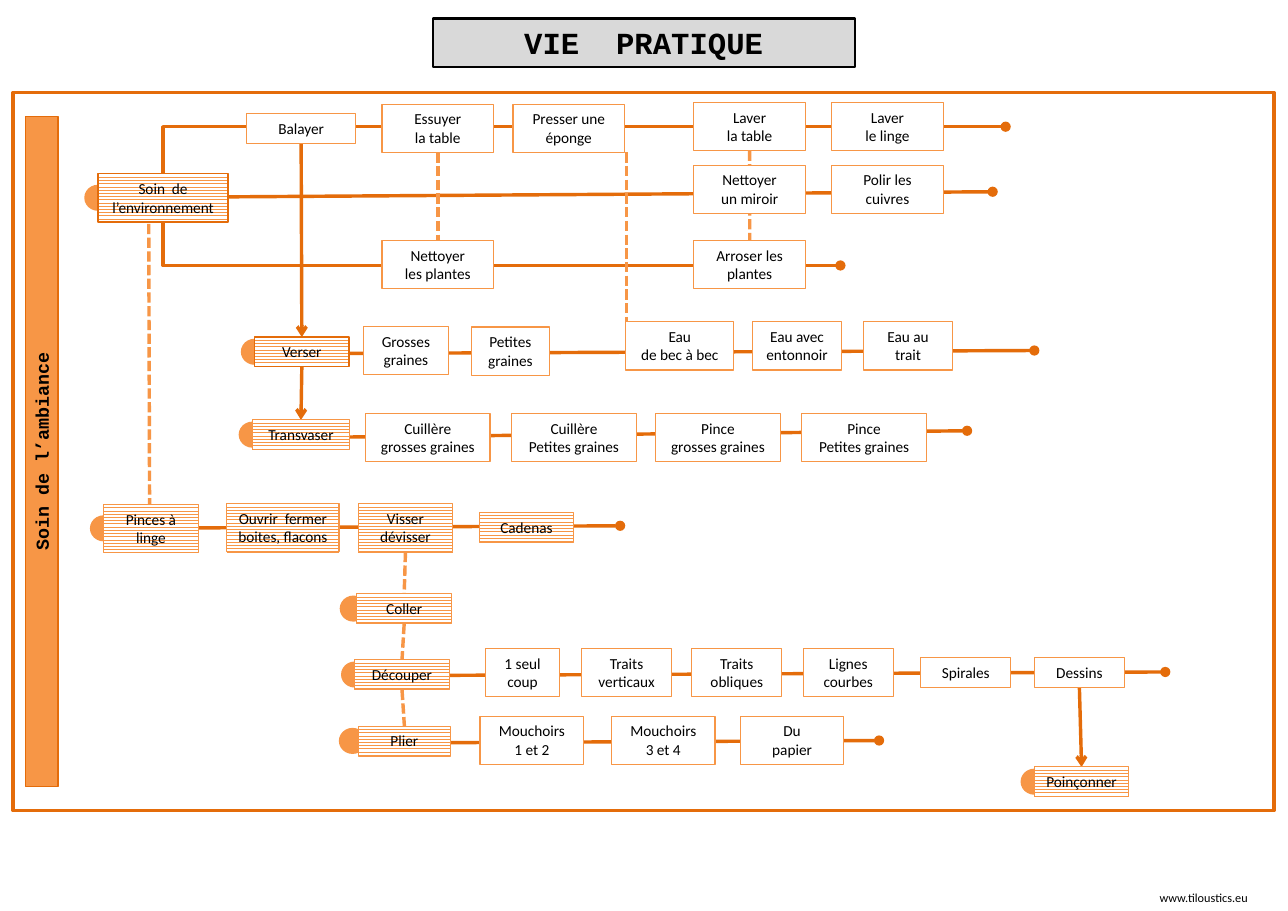
import pptx
import pptx.dml.color
import pptx.enum.dml
import pptx.enum.shapes
import pptx.enum.text
import pptx.oxml
import pptx.oxml.ns
import pptx.util
import lxml.etree

Cm = pptx.util.Cm
Pt = pptx.util.Pt
PRESET = pptx.enum.shapes.MSO_SHAPE
CONNECTOR = pptx.enum.shapes.MSO_CONNECTOR
COLOURS = {
    "dark": "E46C0A",
    "orange": "F79646",
    "white": "FFFFFF",
    "grey": "D9D9D9",
    "black": "000000",
}

STEPS = [
    (2.36, 2.57, [(16.0, "Laver\nla table"), (19.18, "Laver\nle linge")]),
    (2.4, 2.57, [(8.81, "Essuyer\nla table"), (11.83, "Presser une éponge")]),
    (2.62, 2.51, [(5.69, "Balayer")]),
    (3.81, 2.57, [(16.0, "Nettoyer\nun miroir"), (19.18, "Polir les cuivres")]),
    (5.55, 2.57, [(8.81, "Nettoyer\nles plantes"), (16.0, "Arroser les plantes")]),
    (7.53, 1.96, [(8.38, "Grosses graines")]),
    (7.54, 1.8, [(10.87, "Petites\ngraines")]),
    (7.42, 2.49, [(14.43, "Eau\nde bec à bec")]),
    (7.42, 2.06, [(17.35, "Eau avec entonnoir"), (19.91, "Eau au trait")]),
    (9.54, 2.87, [(8.43, "Cuillère\ngrosses graines"), (11.8, "Cuillère\nPetites graines"),
                  (15.12, "Pince\ngrosses graines"), (18.49, "Pince\nPetites graines")]),
    (14.95, 1.7, [(11.2, "1 seul\ncoup")]),
    (14.95, 2.08, [(13.41, "Traits verticaux"), (15.95, "Traits obliques"),
                   (18.52, "Lignes courbes")]),
    (15.16, 2.08, [(21.23, "Spirales"), (23.85, "Dessins")]),
    (16.51, 2.39, [(11.07, "Mouchoirs\n1 et 2"), (14.1, "Mouchoirs\n3 et 4"),
                   (17.07, "Du\npapier")]),
]

STRIPED_STEPS = [
    (5.23, 11.61, 2.59, "Ouvrir  fermer\nboites, flacons"),
    (8.26, 11.61, 2.18, "Visser dévisser"),
    (11.05, 11.81, 2.18, "Cadenas"),
]

THEMES = [
    (2.26, 4.01, 3.0, "Soin  de l’environnement", 0.28, "dark"),
    (5.87, 7.77, 2.18, "Verser", 0.28, "dark"),
    (5.82, 9.68, 2.24, "Transvaser", 0.28, "orange"),
    (2.39, 11.63, 2.18, "Pinces à linge", 0.28, "orange"),
    (8.23, 13.69, 2.18, "Coller", 0.36, "orange"),
    (8.18, 15.21, 2.18, "Découper", 0.28, "orange"),
    (8.26, 16.74, 2.13, "Plier", 0.41, "orange"),
    (23.85, 17.68, 2.18, "Poinçonner", 0.28, "orange"),
]

PROGRESSIONS = [
    (3.45, 4.55, 22.89, 4.42),
    (7.47, 8.15, 23.85, 8.08),
    (7.42, 10.08, 22.3, 9.93),
    (4.34, 12.17, 14.3, 12.12),
    (9.86, 15.57, 26.87, 15.49),
    (10.31, 17.12, 20.27, 17.07),
]


class Board:
    def __init__(self, slide):
        self.shapes = slide.shapes
        self.boxes = {}
        self.front = None

    def colour(self, name):
        return pptx.dml.color.RGBColor.from_string(COLOURS[name])

    def preset(self, kind, left, top, width, height, fill, line, weight):
        part = self.shapes.add_shape(kind, Cm(left), Cm(top), Cm(width), Cm(height))
        part.shadow.inherit = False
        if fill is None:
            part.fill.background()
        elif fill == "stripes":
            part.fill.patterned()
            part.fill.pattern = pptx.enum.dml.MSO_PATTERN.ZIG_ZAG
            part.fill.fore_color.rgb = self.colour("orange")
            part.fill.back_color.rgb = self.colour("white")
        else:
            part.fill.solid()
            part.fill.fore_color.rgb = self.colour(fill)
        part.line.color.rgb = self.colour(line)
        part.line.width = Pt(weight)
        return part

    def label(self, part, text, size=10, font="Calibri", bold=False, align="CENTER"):
        frame = part.text_frame
        frame.word_wrap = True
        frame.auto_size = pptx.enum.text.MSO_AUTO_SIZE.SHAPE_TO_FIT_TEXT
        frame.vertical_anchor = pptx.enum.text.MSO_ANCHOR.TOP
        frame.text = text
        for paragraph in frame.paragraphs:
            paragraph.alignment = pptx.enum.text.PP_ALIGN[align]
            for run in paragraph.runs:
                run.font.size = Pt(size)
                run.font.name = font
                run.font.bold = bold
                run.font.color.rgb = self.colour("black")

    def banner(self, left, top, width, height, text, size, fill, line, weight, rotation=0):
        banner = self.preset(PRESET.RECTANGLE, left, top, width, height, fill, line, weight)
        banner.rotation = rotation
        self.label(banner, text, size, "Courier New", True)

    def step(self, left, top, width, text, fill="white", line="orange"):
        height = 1.11 if len(text.split()) > 1 else 0.69
        box = self.preset(PRESET.RECTANGLE, left, top, width, height, fill, line, 0.75)
        self.label(box, text)
        self.boxes[text] = box
        if self.front is None:
            self.front = box._element

    def theme(self, left, top, width, text, overhang, line):
        middle = top + (1.11 if len(text.split()) > 1 else 0.69) / 2
        self.preset(PRESET.OVAL, left - overhang, middle - 0.27, 0.56, 0.53,
                    "orange", "orange", 2)
        self.step(left, top, width, text, "stripes", line)

    def line(self, x1, y1, x2, y2, tail=None, dashed=False, kind=CONNECTOR.STRAIGHT):
        line = self.shapes.add_connector(kind, Cm(x1), Cm(y1), Cm(x2), Cm(y2))
        line.line.color.rgb = self.colour("orange" if dashed else "dark")
        line.line.width = Pt(2.25)
        if dashed:
            line.line.dash_style = pptx.enum.dml.MSO_LINE.SQUARE_DOT
        if tail:
            lxml.etree.SubElement(line.line._get_or_add_ln(),
                                  pptx.oxml.ns.qn("a:tailEnd"), type=tail)
        lxml.etree.SubElement(line._element.spPr, pptx.oxml.ns.qn("a:effectLst"))
        self.front.addprevious(line._element)
        return line

    def branch(self, x1, y1, x2, y2):
        run, rise = x2 - x1, abs(y2 - y1)
        left = (x1 + x2 - rise) / 2
        top = (y1 + y2 - run) / 2
        branch = self.line(left, top, left + rise, top + run, "oval", kind=CONNECTOR.ELBOW)
        properties = branch._element.spPr
        properties.find(pptx.oxml.ns.qn("a:prstGeom")).set("prst", "bentConnector2")
        properties.xfrm.set("rot", str(270 * 60000))
        if y2 > y1:
            properties.xfrm.set("flipH", "1")

    def link(self, upper, lower, tail=None, dashed=False):
        link = self.line(0, 0, 1, 1, tail, dashed)
        link.begin_connect(self.boxes[upper], 2)
        link.end_connect(self.boxes[lower], 0)


def main():
    deck = pptx.Presentation()
    deck.slide_width, deck.slide_height = Cm(29.7), Cm(21)
    board = Board(deck.slides.add_slide(deck.slide_layouts[6]))

    board.preset(PRESET.RECTANGLE, 0.3, 2.13, 29.08, 16.56, None, "dark", 2)
    for top, width, row in STEPS:
        for left, text in row:
            board.step(left, top, width, text)
    for left, top, width, text in STRIPED_STEPS:
        board.step(left, top, width, text, "stripes")
    for theme in THEMES:
        board.theme(*theme)

    for progression in PROGRESSIONS:
        board.line(*progression, tail="oval")
    board.branch(3.76, 5.11, 19.38, 6.12)
    board.branch(3.76, 4.01, 23.19, 2.92)
    for upper, lower in [("Balayer", "Verser"), ("Verser", "Transvaser"),
                         ("Dessins", "Poinçonner")]:
        board.link(upper, lower, tail="arrow")
    for upper, lower in [("Essuyer\nla table", "Nettoyer\nles plantes"),
                         ("Visser dévisser", "Coller"), ("Coller", "Découper"),
                         ("Découper", "Plier")]:
        board.link(upper, lower, dashed=True)
    board.line(3.43, 5.16, 3.45, 11.91, dashed=True)
    board.line(14.45, 3.51, 14.45, 7.52, dashed=True)
    watering = board.line(17.29, 3.47, 17.29, 6.07, dashed=True)
    watering.begin_connect(board.boxes["Laver\nla table"], 2)

    board.banner(-6.76, 10.03, 15.44, 0.76, "Soin de l’ambiance", 12,
                 "orange", "dark", 0.75, 270)
    board.banner(9.98, 0.43, 9.73, 1.11, "VIE  PRATIQUE", 20, "grey", "black", 1.5)
    website = board.shapes.add_textbox(Cm(26.49), Cm(20.4), Cm(3.2), Cm(0.6))
    board.label(website, "www.tiloustics.eu", 8, align="LEFT")
    deck.save("out.pptx")


if __name__ == "__main__":
    main()
